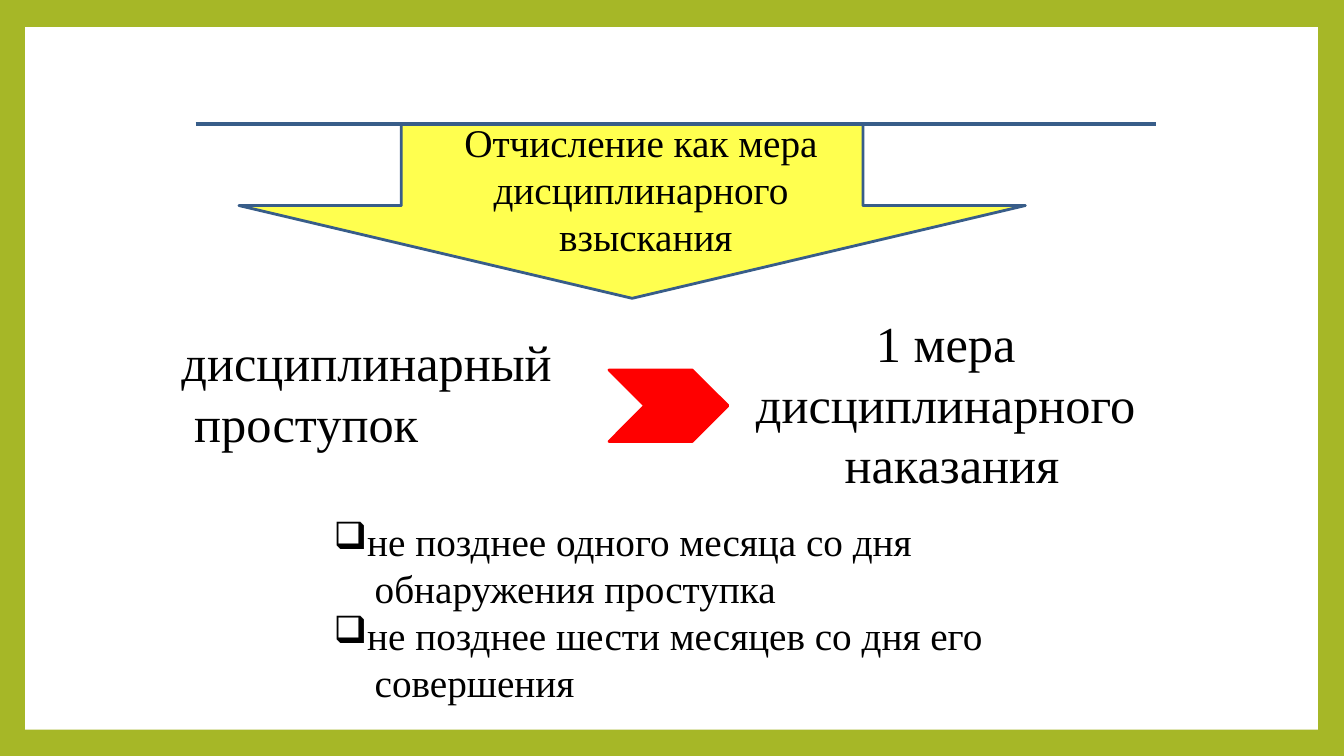
from dataclasses import dataclass

from lxml.etree import SubElement
from pptx import Presentation
from pptx.dml.color import RGBColor
from pptx.enum.shapes import MSO_CONNECTOR as Connector, MSO_SHAPE as Preset
from pptx.enum.text import PP_ALIGN as Align
from pptx.oxml.ns import qn
from pptx.util import Inches, Pt

FONT = "Times New Roman"
GREEN, WHITE, BLACK = "A6B727", "FFFFFF", "000000"
BLUE, YELLOW, RED = "385D89", "FFFF00", "FF0000"


@dataclass
class Figure:
    preset: Preset
    box: tuple[float, float, float, float]
    fill: str
    line: str | None = None
    adjustments: tuple[float, ...] = ()
    opacity: int = 100


@dataclass
class Caption:
    box: tuple[float, float, float, float]
    size: int
    paragraphs: tuple[str, ...]
    align: Align = Align.LEFT
    spacing: float = 1.0
    bullet: str | None = None


FIGURES = (
    Figure(Preset.RECTANGLE, (0.25, 0.27, 12.82, 6.97), WHITE),
    Figure(Preset.DOWN_ARROW, (2.37, 1.23, 7.8, 1.73), YELLOW, BLUE, (0.587, 0.532), 69),
    Figure(Preset.CHEVRON, (6.04, 3.67, 1.18, 0.71), RED, RED, (0.5,)),
)

CAPTIONS = (
    Caption((4.12, 1.17, 4.57, 1.42), 28,
            ("Отчисление как мера \vдисциплинарного \vвзыскания",), Align.CENTER),
    Caption((1.8, 3.27, 3.71, 1.24), 36, ("дисциплинарный\v проступок",), spacing=1.02),
    Caption((7.48, 3.1, 3.8, 1.82), 36,
            ("1 мера", "дисциплинарного\v наказания"), Align.CENTER),
    Caption((3.29, 5.13, 6.47, 1.87), 28,
            ("не позднее одного месяца со дня\v обнаружения проступка",
             "не позднее шести месяцев со дня его\v совершения"), bullet="❑"),
)


def color(value: str) -> RGBColor:
    return RGBColor.from_string(value)


def draw_figure(slide, figure: Figure) -> None:
    shape = slide.shapes.add_shape(figure.preset, *map(Inches, figure.box))
    shape.shadow.inherit = False
    for index, adjustment in enumerate(figure.adjustments):
        shape.adjustments[index] = adjustment
    shape.fill.solid()
    shape.fill.fore_color.rgb = color(figure.fill)
    if figure.opacity < 100:
        tint = shape.element.spPr.find(qn("a:solidFill"))[0]
        SubElement(tint, qn("a:alpha")).set("val", str(figure.opacity * 1000))
    if figure.line:
        shape.line.color.rgb = color(figure.line)
        shape.line.width = Pt(2)
    else:
        shape.line.fill.background()


def draw_rule(slide, left: float, right: float, top: float) -> None:
    rule = slide.shapes.add_connector(
        Connector.STRAIGHT, Inches(left), Inches(top), Inches(right), Inches(top))
    rule.line.color.rgb = color(BLUE)
    rule.line.width = Pt(2.5)
    SubElement(rule.element.spPr, qn("a:effectLst"))


def add_bullet(paragraph, symbol: str) -> None:
    properties = paragraph._p.get_or_add_pPr()
    properties.set("marL", str(Inches(0.33)))
    properties.set("indent", str(Inches(-0.31)))
    SubElement(properties, qn("a:buSzPct")).set("val", "96000")
    SubElement(properties, qn("a:buChar")).set("char", symbol)


def draw_caption(slide, caption: Caption) -> None:
    frame = slide.shapes.add_textbox(*map(Inches, caption.box)).text_frame
    frame.word_wrap = True
    frame.margin_left = frame.margin_right = frame.margin_top = frame.margin_bottom = 0
    for index, text in enumerate(caption.paragraphs):
        paragraph = frame.add_paragraph() if index else frame.paragraphs[0]
        paragraph.text = text
        paragraph.alignment = caption.align
        paragraph.line_spacing = caption.spacing
        paragraph.font.name = FONT
        paragraph.font.size = Pt(caption.size)
        paragraph.font.color.rgb = color(BLACK)
        if caption.bullet:
            add_bullet(paragraph, caption.bullet)


def main() -> None:
    deck = Presentation()
    deck.slide_width, deck.slide_height = Inches(13.33), Inches(7.5)
    slide = deck.slides.add_slide(deck.slide_layouts[6])
    slide.background.fill.solid()
    slide.background.fill.fore_color.rgb = color(GREEN)
    for figure in FIGURES:
        draw_figure(slide, figure)
    draw_rule(slide, 1.94, 11.47, 1.23)
    for caption in CAPTIONS:
        draw_caption(slide, caption)
    deck.save("out.pptx")


if __name__ == "__main__":
    main()
